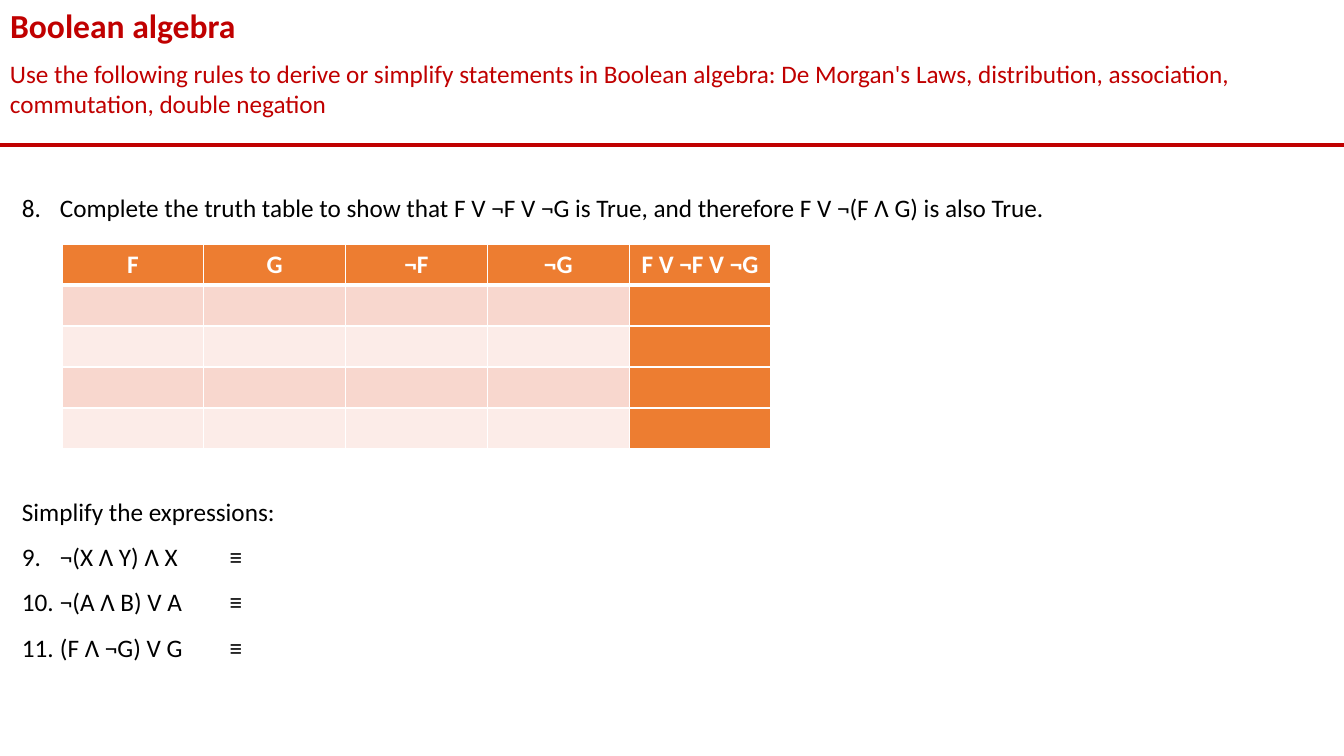
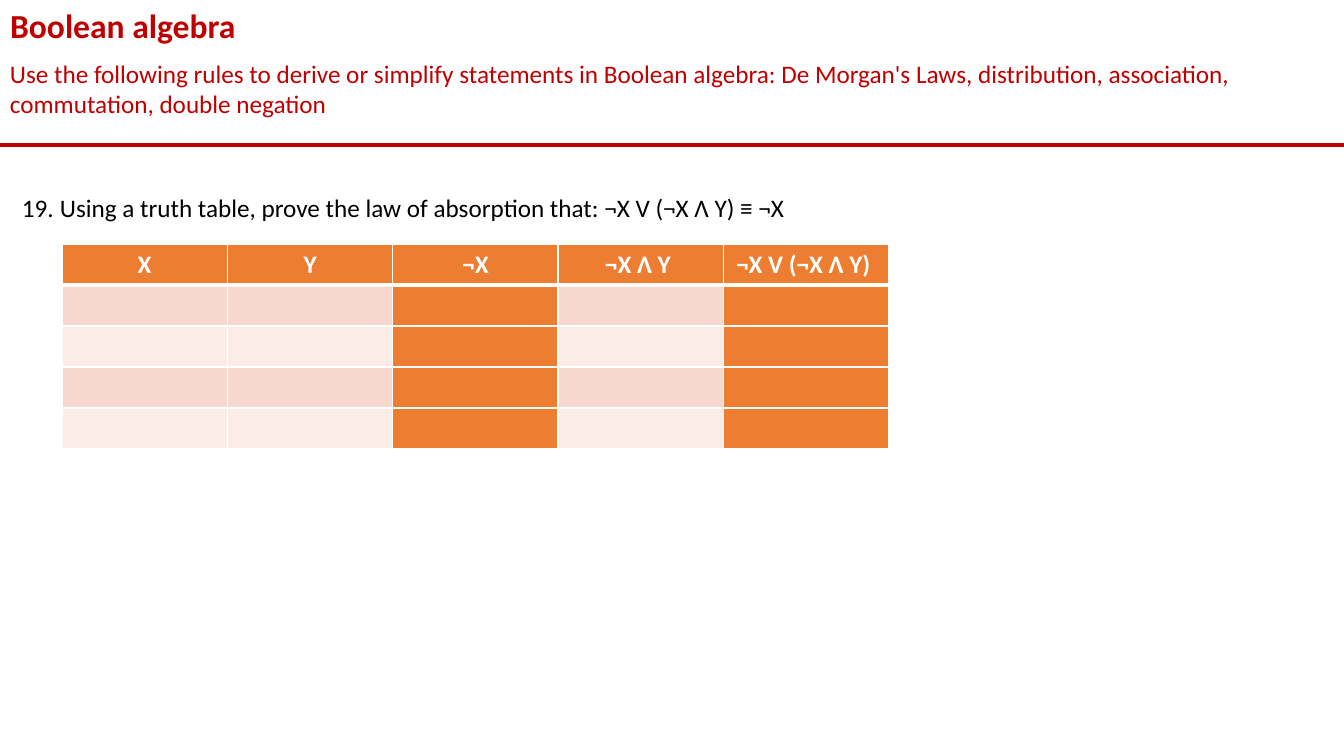
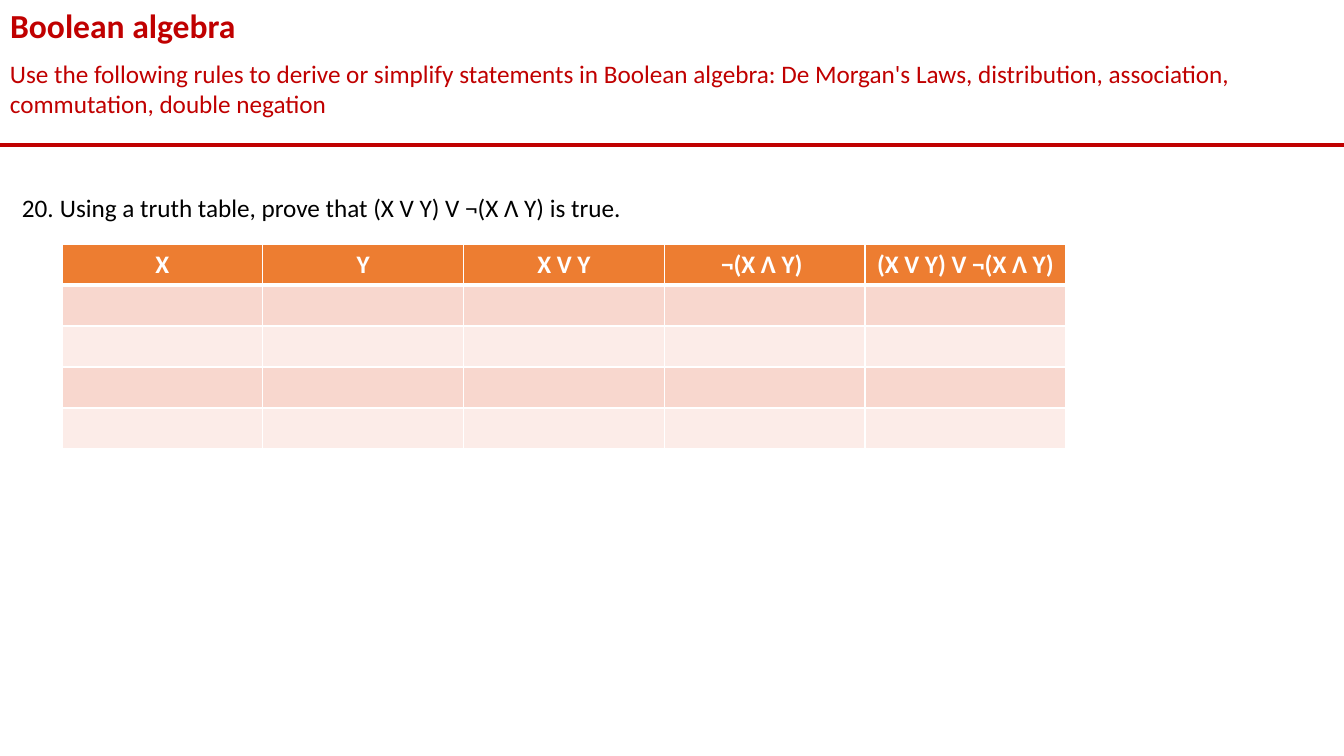
from lxml import etree
from pptx import Presentation
from pptx.dml.color import RGBColor
from pptx.enum.shapes import MSO_CONNECTOR
from pptx.enum.text import MSO_ANCHOR, MSO_AUTO_SIZE, PP_ALIGN
from pptx.oxml.ns import qn
from pptx.util import Pt

# Enum members
STRAIGHT = MSO_CONNECTOR.STRAIGHT
TOP = MSO_ANCHOR.TOP
NO_FIT = MSO_AUTO_SIZE.NONE
LEFT, CENTER = PP_ALIGN.LEFT, PP_ALIGN.CENTER

# Shared style
SCALE = 914400 / 100.8
WIDTH, HEIGHT = 1344, 756
INDENT = 38
TAB_SIZE = 101
RED = RGBColor(0xC0, 0x00, 0x00)
BLACK = RGBColor(0x00, 0x00, 0x00)
WHITE = RGBColor(0xFF, 0xFF, 0xFF)
ORANGE = RGBColor(0xED, 0x7D, 0x31)
BANDS = [RGBColor(0xFC, 0xEC, 0xE8), RGBColor(0xF8, 0xD7, 0xCE)]
BODY = {"name": "Calibri", "size": Pt(18), "bold": False}
HEADING = {"name": "Calibri", "size": Pt(24), "bold": True}
HEADER = {**BODY, "bold": True}

TITLE = "Boolean algebra"
SUBTITLE = ("Use the following rules to derive or simplify statements in Boolean algebra: "
            "De Morgan's Laws, distribution, association, commutation, double negation")


def px(length):
    return round(length * SCALE)


class Worksheet:
    """Holds the deck style and the page being built."""

    def __init__(self):
        self.deck = Presentation()
        self.deck.slide_width, self.deck.slide_height = px(WIDTH), px(HEIGHT)
        self.page = None

    def new_page(self):
        self.page = self.deck.slides.add_slide(self.deck.slide_layouts[5])
        self.rule(145)
        self.text(0, 53, WIDTH, 72, [SUBTITLE], RED)
        self.title()

    def add_span(self, para, text, style, color, align=LEFT):
        para.alignment = align
        span = para.add_run()
        span.text = text
        for name, value in style.items():
            setattr(span.font, name, value)
        span.font.color.rgb = color

    def title(self):
        box = self.page.shapes.title
        place = {"left": 0, "top": 0, "width": px(WIDTH), "height": px(50)}
        for name, value in place.items():
            setattr(box, name, value)
        frame = box.text_frame
        frame.auto_size = NO_FIT
        frame.vertical_anchor = TOP
        self.add_span(frame.paragraphs[0], TITLE, HEADING, RED)

    def rule(self, top):
        line = self.page.shapes.add_connector(STRAIGHT, 0, px(top), px(WIDTH), px(top))
        line.line.color.rgb = RED
        line.line.width = Pt(2.25)
        etree.SubElement(line._element.spPr, qn("a:effectLst"))

    def text(self, left, top, width, height, lines, color=BLACK, spacing=None):
        box = self.page.shapes.add_textbox(px(left), px(top), px(width), px(height))
        frame = box.text_frame
        frame.word_wrap = True
        for index, line in enumerate(lines):
            para = frame.paragraphs[0] if index == 0 else frame.add_paragraph()
            para.line_spacing = spacing
            self.add_span(para, line, BODY, color)
        return frame.paragraphs

    def number(self, paras, start):
        for para in paras:
            props = para._p.get_or_add_pPr()
            for name, value in (("marL", INDENT), ("indent", -INDENT), ("defTabSz", TAB_SIZE)):
                props.set(name, str(px(value)))
            etree.SubElement(props, qn("a:buFont"), typeface="+mj-lt")
            etree.SubElement(props, qn("a:buAutoNum"), type="arabicPeriod", startAt=str(start))

    def question(self, number, text):
        self.number(self.text(12, 172, 1317, 54, [text], spacing=1.5), number)

    def borders(self, cell, row):
        widths = {"L": 1, "R": 1, "T": 3 if row == 1 else 1, "B": 3 if row == 0 else 1}
        props = cell._tc.get_or_add_tcPr()
        for index, (side, width) in enumerate(widths.items()):
            line = etree.Element(qn("a:ln" + side), w=str(int(Pt(width))))
            fill = etree.SubElement(line, qn("a:solidFill"))
            etree.SubElement(fill, qn("a:srgbClr"), val=str(WHITE))
            props.insert(index, line)

    def truth_table(self, headers, width, shaded=()):
        rows, row_height = 5, 41
        table = self.page.shapes.add_table(rows, len(headers), px(62), px(244), px(width),
                                           px(rows * row_height)).table
        table.horz_banding = False
        for column in table.columns:
            column.width = px(width / len(headers))
        for row in range(rows):
            table.rows[row].height = px(row_height)
            for col, header in enumerate(headers):
                cell = table.cell(row, col)
                cell.fill.solid()
                strong = row == 0 or col in shaded
                cell.fill.fore_color.rgb = ORANGE if strong else BANDS[row % 2]
                self.borders(cell, row)
                if row == 0:
                    self.add_span(cell.text_frame.paragraphs[0], header, HEADER, WHITE, CENTER)


def main():
    sheet = Worksheet()

    # Question 8 and expressions to simplify
    sheet.new_page()
    sheet.question(8, "Complete the truth table to show that F V ¬F V ¬G is True, "
                      "and therefore F V ¬(F Ʌ G) is also True.")
    sheet.truth_table(["F", "G", "¬F", "¬G", "F V ¬F V ¬G"], 709, shaded=(4,))
    expressions = ["¬(X Ʌ Y) Ʌ X", "¬(A Ʌ B) V A", "(F Ʌ ¬G) V G"]
    paras = sheet.text(12, 476, 672, 194,
                       ["Simplify the expressions:"] + [item + "\t ≡" for item in expressions],
                       spacing=1.5)
    sheet.number(paras[1:], 9)

    # Question 19
    sheet.new_page()
    sheet.question(19, "Using a truth table, prove the law of absorption that: "
                       "¬X V (¬X Ʌ Y) ≡ ¬X")
    sheet.truth_table(["X", "Y", "¬X", "¬X Ʌ Y ", "¬X V (¬X Ʌ Y) "], 827, shaded=(2, 4))

    # Question 20
    sheet.new_page()
    sheet.question(20, "Using a truth table, prove that (X V Y) V ¬(X Ʌ Y) is true.")
    sheet.truth_table(["X", "Y", "X V Y", "¬(X Ʌ Y) ", "(X V Y) V ¬(X Ʌ Y) "], 1004)

    sheet.deck.save("out.pptx")


if __name__ == "__main__":
    main()
